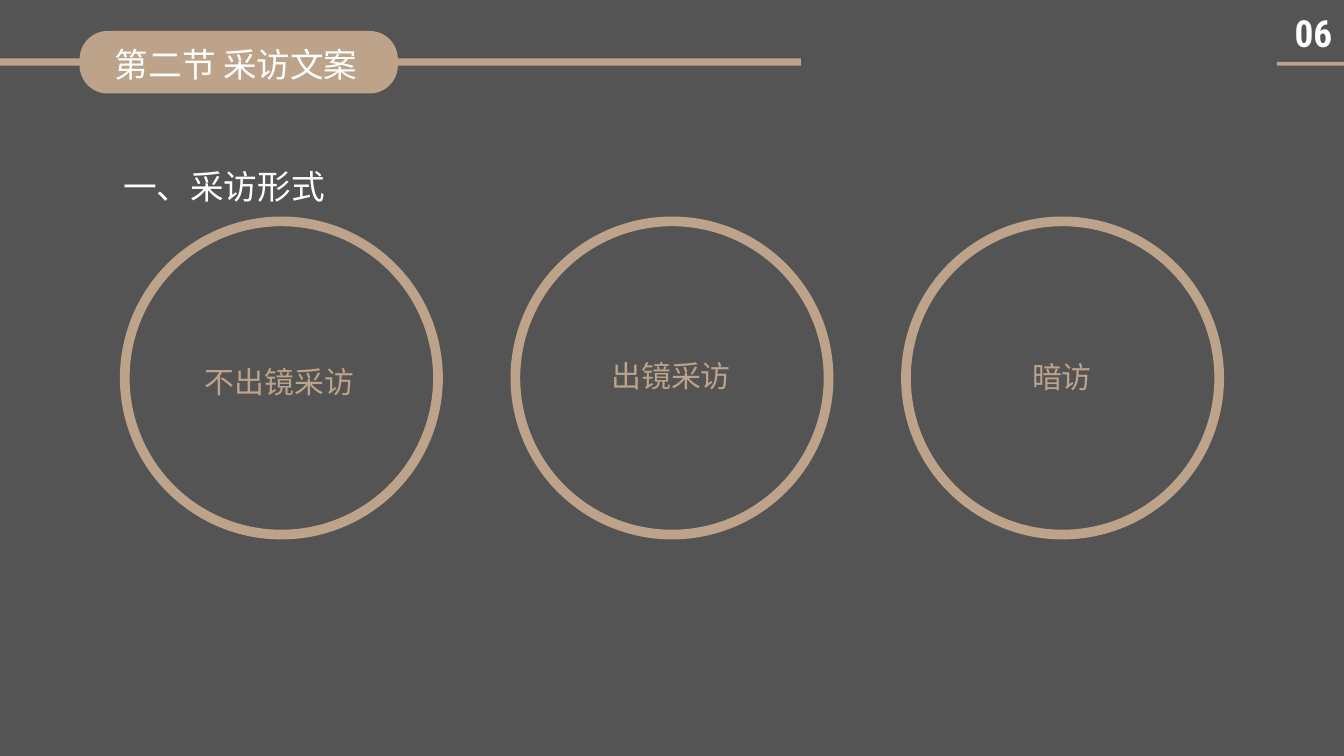
from dataclasses import dataclass

from lxml.etree import SubElement
from pptx import Presentation
from pptx.dml.color import RGBColor
from pptx.enum.shapes import MSO_SHAPE as SHAPE
from pptx.enum.text import MSO_AUTO_SIZE as AUTO
from pptx.oxml.ns import qn
from pptx.util import Pt


@dataclass(frozen=True)
class Theme:
    back: RGBColor = RGBColor(0x54, 0x54, 0x54)
    tan: RGBColor = RGBColor(0xBD, 0xA3, 0x89)
    white: RGBColor = RGBColor(0xFF, 0xFF, 0xFF)
    cjk: str = "Noto Sans CJK SC"
    latin: str = "Roboto Condensed"
    title: int = 36
    label: int = 32
    number: int = 40


T = Theme()


def add_text(s, text, x, y, w, h, *, size=T.title, color=T.white, font=T.cjk,
             bold=False, wrap=True, inset=True, spacing=None, indent=0):
    """Add a one-paragraph text box; lengths are in points."""
    tf = s.shapes.add_textbox(Pt(x), Pt(y), Pt(w), Pt(h)).text_frame
    tf.word_wrap = wrap
    tf.auto_size = AUTO.SHAPE_TO_FIT_TEXT
    if not inset:
        tf.margin_left = tf.margin_right = tf.margin_top = tf.margin_bottom = 0
    p = tf.paragraphs[0]
    if spacing:
        p.line_spacing = spacing
    if indent:
        p._p.get_or_add_pPr().set("indent", str(Pt(indent)))
    r = p.add_run()
    r.text = text
    r.font.size, r.font.bold, r.font.name = Pt(size), bold, font
    r.font.color.rgb = color
    SubElement(r._r.get_or_add_rPr(), qn("a:ea")).set("typeface", font)


def add_tan(s, kind, x, y, w, h, adjust=None):
    """Add a borderless shape in the accent colour."""
    sp = s.shapes.add_shape(kind, Pt(x), Pt(y), Pt(w), Pt(h))
    sp.shadow.inherit = False
    sp.fill.solid()
    sp.fill.fore_color.rgb = T.tan
    sp.line.fill.background()
    if adjust is not None:
        sp.adjustments[0] = adjust


prs = Presentation()
prs.slide_width, prs.slide_height = Pt(1440), Pt(810)
s = prs.slides.add_slide(prs.slide_layouts[6])
s.background.fill.solid()
s.background.fill.fore_color.rgb = T.back

# Heading and page number
add_text(s, "一、采访形式", 131.8, 156.2, 1128, 60, inset=False, spacing=1.5)
add_tan(s, SHAPE.RECTANGLE, 1368, 66.2, 72, 4.3)
add_text(s, "06", 1380, 7.2, 58.5, 55.4, size=T.number, font=T.latin, bold=True)

# Title pill on its bar
add_tan(s, SHAPE.RECTANGLE, -2, 62.5, 860, 8)
add_tan(s, SHAPE.ROUNDED_RECTANGLE, 85.3, 33.2, 341, 67, 0.45)
add_text(s, "第二节 采访文案", 116, 43.2, 418, 51)

# Three evenly spaced rings around the slide centre
RING, STEP, RING_TOP = 346, 418.5, 232
for i in range(3):
    center = 720 + (i - 1) * STEP
    add_tan(s, SHAPE.DONUT, center - RING / 2, RING_TOP, RING, RING, 0.03)

label = dict(size=T.label, color=T.tan, wrap=False)
add_text(s, "不出镜采访", 149.8, 366.5, 239, 56, spacing=1.5, indent=62.6, **label)
add_text(s, "出镜采访", 648, 379.5, 144, 46, **label)
add_text(s, "暗访", 1098.7, 380.9, 79, 46, **label)

prs.save("out.pptx")
